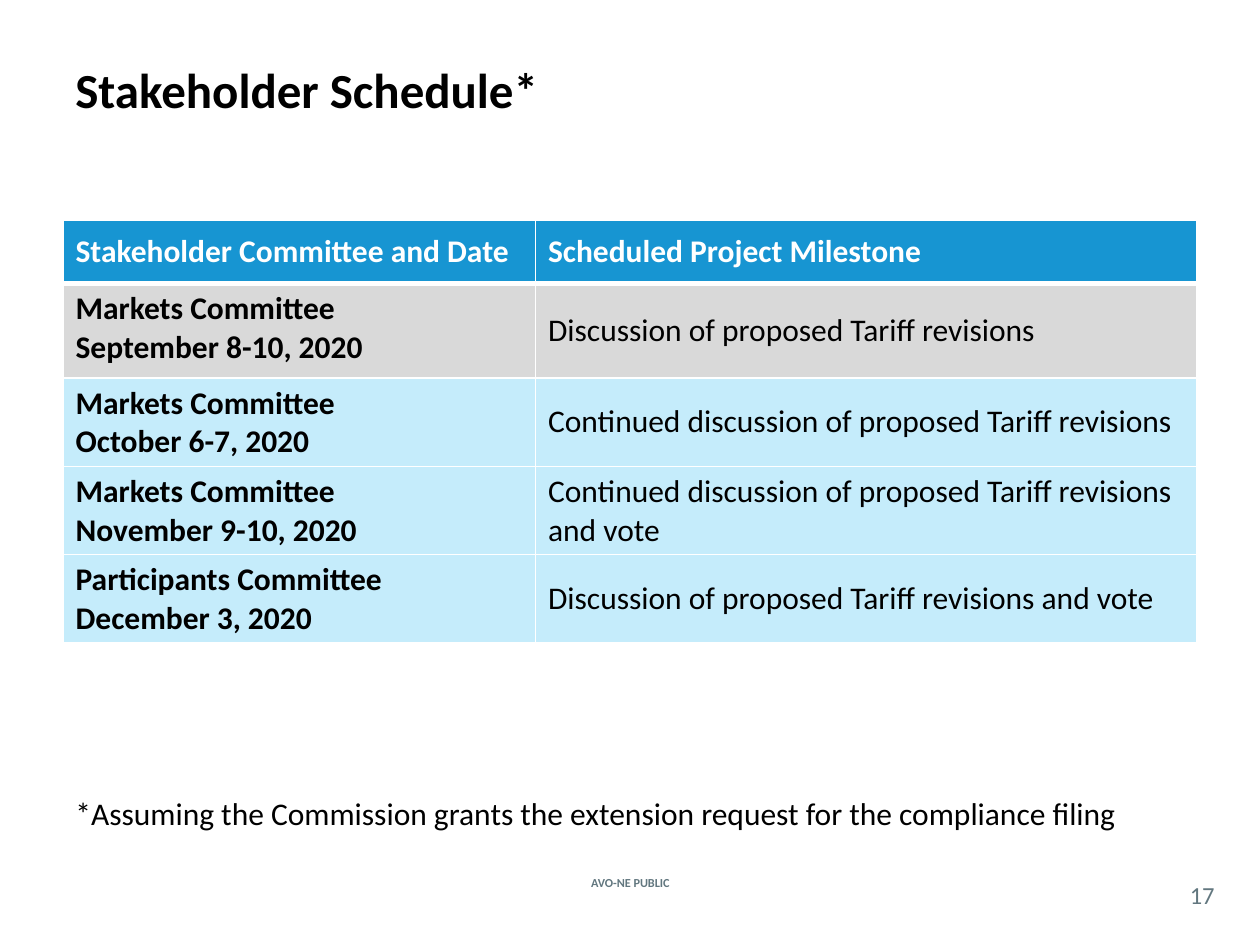
from dataclasses import dataclass

from lxml.etree import SubElement as Sub
from pptx import Presentation
from pptx.dml.color import RGBColor as Rgb
from pptx.enum.text import MSO_ANCHOR as Anchor, PP_ALIGN as Align
from pptx.oxml.ns import qn
from pptx.util import Pt


@dataclass(frozen=True)
class Theme:
    font: str = "Calibri"
    black: str = "000000"
    white: str = "FFFFFF"
    slate: str = "62777F"
    blue: str = "1795D2"
    gray: str = "D9D9D9"
    sky: str = "C5ECFB"
    title: int = 28
    body: int = 18
    number: int = 14
    label: int = 7


class Deck:
    def __init__(self, theme):
        self.theme = theme
        self.prs = Presentation()
        self.prs.slide_width, self.prs.slide_height = Pt(720), Pt(540)
        self.slide = self.prs.slides.add_slide(self.prs.slide_layouts[6])

    def put(self, frame, lines, size, color, bold=False, align=Align.LEFT):
        for i, line in enumerate(lines):
            para = frame.add_paragraph() if i else frame.paragraphs[0]
            para.alignment = align
            run = para.add_run()
            run.text = line
            font = run.font
            font.name, font.size, font.bold = self.theme.font, Pt(size), bold
            font.color.rgb = Rgb.from_string(color)

    def text(self, box, line, size, color, bold=False, align=Align.LEFT,
             anchor=Anchor.MIDDLE, inset=None):
        frame = self.slide.shapes.add_textbox(*map(Pt, box)).text_frame
        frame.word_wrap = True
        frame.vertical_anchor = anchor
        if inset is not None:
            frame.margin_left = frame.margin_right = Pt(inset)
            frame.margin_top = frame.margin_bottom = Pt(inset)
        self.put(frame, [line], size, color, bold, align)

    def border(self, cell, top, bottom):
        props = cell._tc.get_or_add_tcPr()
        for side, width in (("L", 1), ("R", 1), ("T", top), ("B", bottom)):
            line = Sub(props, qn(f"a:ln{side}"), w=str(Pt(width)))
            fill = Sub(line, qn("a:solidFill"))
            Sub(fill, qn("a:srgbClr"), val=self.theme.white)

    def table(self, box, widths, heights, rows, fills):
        grid = self.slide.shapes.add_table(
            len(rows), len(widths), *map(Pt, box)).table
        for col, width in zip(grid.columns, widths):
            col.width = Pt(width)
        for r, (row, height, fill) in enumerate(zip(rows, heights, fills)):
            grid.rows[r].height = Pt(height)
            head = r == 0
            color = self.theme.white if head else self.theme.black
            for c, lines in enumerate(row):
                cell = grid.cell(r, c)
                self.border(cell, 3 if r == 1 else 1, 3 if head else 1)
                cell.fill.solid()
                cell.fill.fore_color.rgb = Rgb.from_string(fill)
                mid = head or c == 1
                cell.vertical_anchor = Anchor.MIDDLE if mid else Anchor.TOP
                self.put(cell.text_frame, lines, self.theme.body, color,
                         bold=head or c == 0)


def main():
    theme = Theme()
    deck = Deck(theme)

    # Title
    deck.text((36, 30, 648, 42), "Stakeholder Schedule*", theme.title,
              theme.black, bold=True)

    # Schedule table
    rows = [
        (["Stakeholder Committee and Date"], ["Scheduled Project Milestone"]),
        (["Markets Committee", "September 8-10, 2020"],
         ["Discussion of proposed Tariff revisions"]),
        (["Markets Committee", "October 6-7, 2020"],
         ["Continued discussion of proposed Tariff revisions"]),
        (["Markets Committee", "November 9-10, 2020"],
         ["Continued discussion of proposed Tariff revisions and vote"]),
        (["Participants Committee", "December 3, 2020"],
         ["Discussion of proposed Tariff revisions and vote"]),
    ]
    deck.table((36, 126, 648, 241.2), (270, 378), [36, 54] + [50.4] * 3,
               rows, [theme.blue, theme.gray] + [theme.sky] * 3)

    # Footnote
    deck.text((36, 450, 666, 29),
              "*Assuming the Commission grants the extension request "
              "for the compliance filing",
              theme.body, theme.black, anchor=Anchor.TOP)

    # Footer label and slide number
    deck.text((307.5, 498, 105.5, 12.5), "AVO-NE PUBLIC", theme.label,
              theme.slate, bold=True, align=Align.CENTER)
    deck.text((672, 501, 30, 21), "17", theme.number, theme.slate,
              align=Align.CENTER, inset=0)

    deck.prs.save("out.pptx")


if __name__ == "__main__":
    main()
